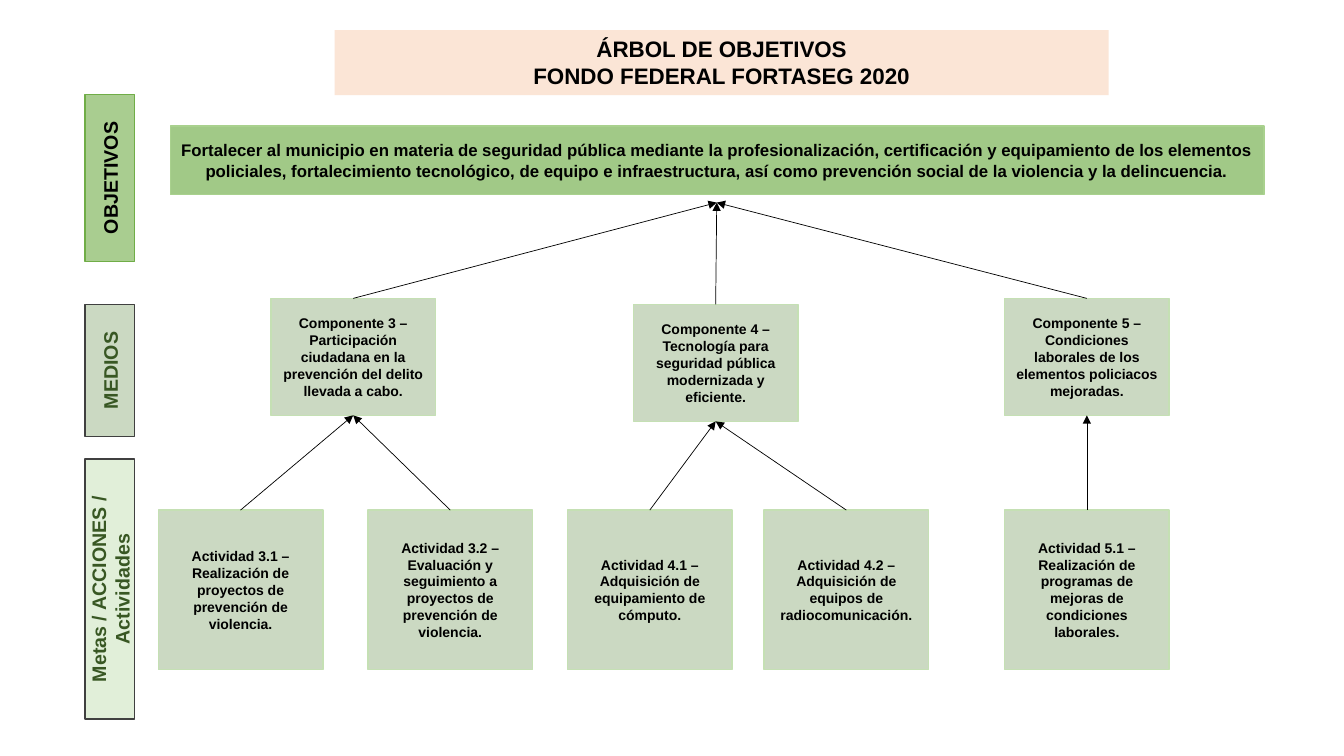
from lxml.etree import SubElement
from pptx import Presentation
from pptx.dml.color import RGBColor
from pptx.enum.shapes import MSO_CONNECTOR, MSO_SHAPE
from pptx.enum.text import MSO_ANCHOR, PP_ALIGN
from pptx.oxml import parse_xml
from pptx.oxml.ns import nsdecls, qn
from pptx.util import Inches, Pt

BLACK, DARK_GREEN, GREY = "000000", "385723", "404040"
MOSS, LEAF, PALE = "548235", "70AD47", "C5E0B4"
TOP, BOTTOM = 0, 2

BOX_WIDTH = 12.25
COMPONENT_HEIGHT, ACTIVITY_TOP, ACTIVITY_HEIGHT = 15.47, 67.47, 21.1
GOAL_TIP = (53.33, 26.8)

GOAL = (
    "Fortalecer al municipio en materia de seguridad pública mediante la "
    "profesionalización, certificación y equipamiento de los elementos policiales, "
    "fortalecimiento tecnológico, de equipo e infraestructura, así como prevención "
    "social de la violencia y la delincuencia."
)

# Each component: centre, top, text, then its activities as (centre, text).
COMPONENTS = [
    (26.28, 39.47, "Componente 3 – Participación ciudadana en la prevención del delito llevada a cabo.", [
        (17.9, "Actividad 3.1 – Realización de proyectos de prevención de violencia."),
        (33.5, "Actividad 3.2 – Evaluación y seguimiento a proyectos de prevención de violencia."),
    ]),
    (53.25, 40.27, "Componente 4 – Tecnología para seguridad pública modernizada y eficiente.", [
        (48.35, "Actividad 4.1 – Adquisición de equipamiento de cómputo."),
        (62.97, "Actividad 4.2 – Adquisición de equipos de radiocomunicación."),
    ]),
    (80.87, 39.47, "Componente 5 – Condiciones laborales de los elementos policiacos mejoradas.", [
        (80.87, "Actividad 5.1 – Realización de programas de mejoras de condiciones laborales."),
    ]),
]


def color(hex_text):
    return RGBColor.from_string(hex_text)


class TreeSlide:
    """Draws on one slide; lengths are hundredths of its width and height."""

    font = "Arial"

    def __init__(self, presentation):
        self.slide = presentation.slides.add_slide(presentation.slide_layouts[6])
        self.column = presentation.slide_width / 100
        self.row = presentation.slide_height / 100

    def x(self, columns):
        return round(columns * self.column)

    def y(self, rows):
        return round(rows * self.row)

    def add_lines(self, shape, lines, size, ink):
        frame = shape.text_frame
        frame.word_wrap = True
        for index, line in enumerate(lines):
            paragraph = frame.paragraphs[0] if index == 0 else frame.add_paragraph()
            paragraph.alignment = PP_ALIGN.CENTER
            run = paragraph.add_run()
            run.text = line
            run.font.name, run.font.size, run.font.bold = self.font, Pt(size), True
            run.font.color.rgb = color(ink)

    def box(self, left, top, width, height, text, size, fill, opacity, border, ink=BLACK):
        shape = self.slide.shapes.add_shape(
            MSO_SHAPE.FLOWCHART_PROCESS, self.x(left), self.y(top), self.x(width), self.y(height))
        shape.shadow.inherit = False
        shape.fill.solid()
        shape.fill.fore_color.rgb = color(fill)
        tint = shape._element.spPr.find(qn("a:solidFill"))[0]
        SubElement(tint, qn("a:alpha"), val=str(opacity * 1000))
        shape.line.color.rgb = color(border)
        shape.line.width = Pt(1)
        shape.text_frame.vertical_anchor = MSO_ANCHOR.MIDDLE
        self.add_lines(shape, [text], size, ink)
        return shape

    def side_label(self, top, height, text, fill, opacity, border, ink):
        """Add a level label that reads upwards along the left edge."""
        label = self.box(6.34, top, 3.68, height, text, 14, fill, opacity, border, ink)
        center_x = label.left + label.width // 2
        center_y = label.top + label.height // 2
        label.width, label.height = label.height, label.width
        label.left, label.top = center_x - label.width // 2, center_y - label.height // 2
        label.rotation = 270
        return label

    def outline_text(self, shape, ink, width):
        properties = shape.text_frame.paragraphs[0].runs[0]._r.get_or_add_rPr()
        properties.insert(0, parse_xml(
            f'<a:ln {nsdecls("a")} w="{int(Pt(width))}"><a:solidFill>'
            f'<a:srgbClr val="{ink}"/></a:solidFill></a:ln>'))

    def title(self, left, top, width, height, lines):
        banner = self.slide.shapes.add_textbox(
            self.x(left), self.y(top), self.x(width), self.y(height))
        banner.fill.solid()
        banner.fill.fore_color.rgb = color("FBE5D6")
        self.add_lines(banner, lines, 16, BLACK)

    def arrow(self, child, parent=None, tip=(0, 0)):
        """Point from a child's top to its parent's bottom, or to a free tip."""
        link = self.slide.shapes.add_connector(
            MSO_CONNECTOR.STRAIGHT, child.left, child.top, self.x(tip[0]), self.y(tip[1]))
        link.begin_connect(child, TOP)
        if parent is not None:
            link.end_connect(parent, BOTTOM)
        link.line.color.rgb = color(BLACK)
        link.line.width = Pt(0.5)
        properties = link._element.spPr
        SubElement(properties.find(qn("a:ln")), qn("a:tailEnd"), type="triangle")
        SubElement(properties, qn("a:effectLst"))

    def node(self, center, top, height, text):
        return self.box(center - BOX_WIDTH / 2, top, BOX_WIDTH, height, text, 10, MOSS, 30, PALE)


def main():
    presentation = Presentation()
    presentation.slide_width, presentation.slide_height = Inches(13.33), Inches(7.5)
    tree = TreeSlide(presentation)

    tree.title(24.9, 4, 57.6, 8.6, ["ÁRBOL DE OBJETIVOS", "FONDO FEDERAL FORTASEG 2020"])
    tree.side_label(12.47, 22.13, "OBJETIVOS", LEAF, 60, LEAF, BLACK)
    means = tree.side_label(40.27, 17.47, "MEDIOS", MOSS, 30, GREY, DARK_GREEN)
    tree.outline_text(means, DARK_GREEN, 0.75)
    tree.side_label(60.73, 34.4, "Metas / ACCIONES / Actividades", PALE, 50, GREY, DARK_GREEN)

    tree.box(12.68, 16.67, 81.38, 9.07, GOAL, 12, LEAF, 65, "A9D18E")
    for center, top, text, activities in COMPONENTS:
        component = tree.node(center, top, COMPONENT_HEIGHT, text)
        tree.arrow(component, tip=GOAL_TIP)
        for activity_center, activity_text in activities:
            activity = tree.node(activity_center, ACTIVITY_TOP, ACTIVITY_HEIGHT, activity_text)
            tree.arrow(activity, component)

    presentation.save("out.pptx")


if __name__ == "__main__":
    main()
